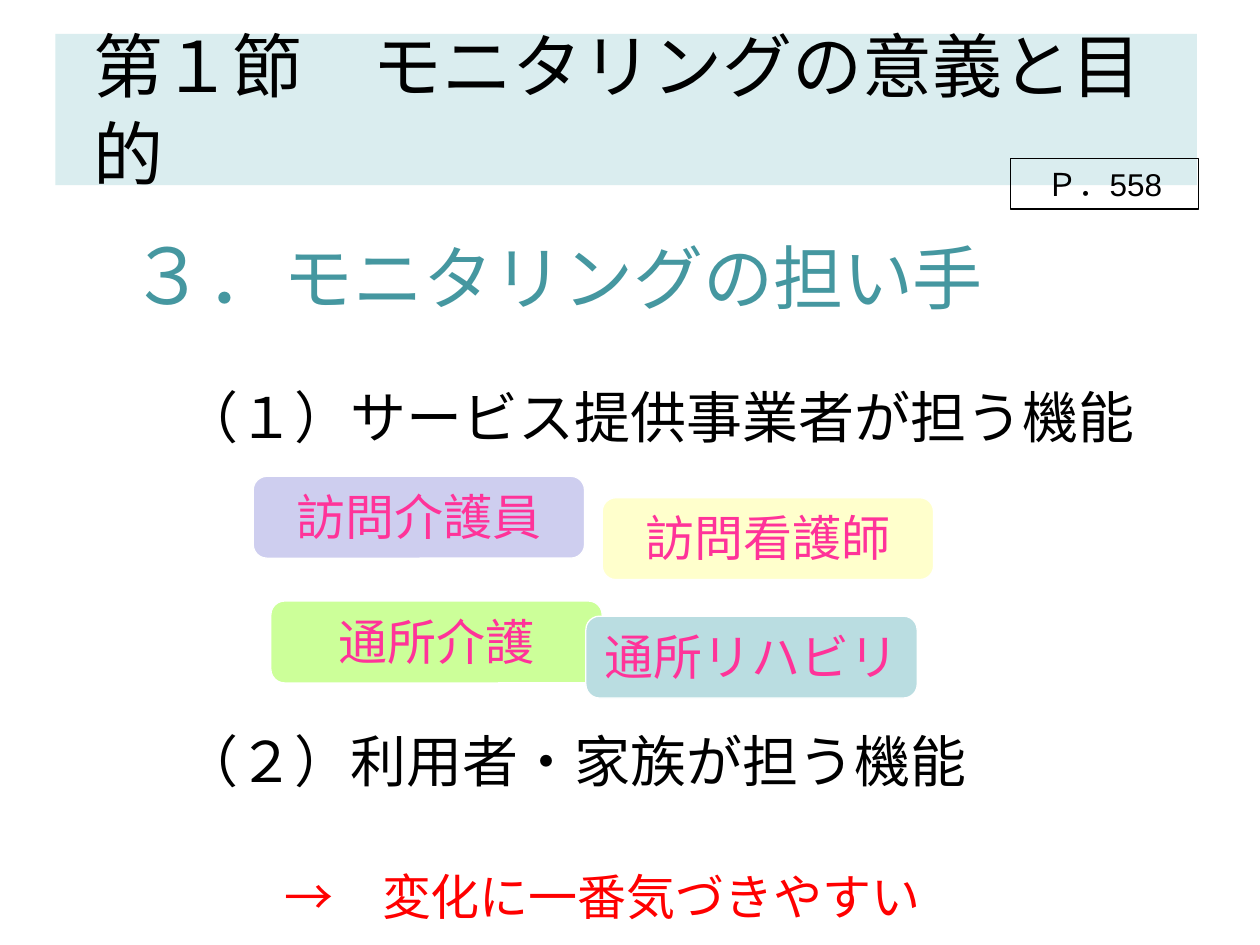
"""Build the slide on who carries out monitoring."""
import pptx
import pptx.dml.color
import pptx.enum.shapes
import pptx.enum.text
import pptx.util

Inches = pptx.util.Inches
Pt = pptx.util.Pt
RGBColor = pptx.dml.color.RGBColor
MSO_SHAPE = pptx.enum.shapes.MSO_SHAPE
ANCHOR = pptx.enum.text.MSO_ANCHOR
ALIGN = pptx.enum.text.PP_ALIGN

BLACK = RGBColor(0x00, 0x00, 0x00)
WHITE = RGBColor(0xFF, 0xFF, 0xFF)
RED = RGBColor(0xFF, 0x00, 0x00)
PINK = RGBColor(0xFF, 0x33, 0x99)
TEAL = RGBColor(0x45, 0x97, 0xA0)
PALE_TEAL = RGBColor(0xDA, 0xED, 0xEF)
LAVENDER = RGBColor(0xCE, 0xCE, 0xEF)
CREAM = RGBColor(0xFF, 0xFF, 0xCC)
LIME = RGBColor(0xCC, 0xFF, 0x99)
AQUA = RGBColor(0xBA, 0xDD, 0xE1)


class SlideBuilder:
    """Hold the text style and the current slide."""

    font_name = "Arial"

    def __init__(self, slide):
        self.slide = slide

    def fill_text(self, frame, paragraphs, color, frame_format=None, indent=0, **paragraph_format):
        """Fill a frame with paragraphs, each a list of (text, size) runs."""
        for name, value in {"word_wrap": True, **(frame_format or {})}.items():
            setattr(frame, name, value)
        for index, runs in enumerate(paragraphs):
            paragraph = frame.add_paragraph() if index else frame.paragraphs[0]
            values = {"alignment": ALIGN.LEFT, **paragraph_format}
            if index == 0:
                values.pop("space_before", None)
            for name, value in values.items():
                setattr(paragraph, name, value)
            if indent:
                paragraph._p.get_or_add_pPr().set("marL", str(Inches(indent)))
            for text, size in runs:
                run = paragraph.add_run()
                run.text = text
                for name, value in {"name": self.font_name, "size": Pt(size)}.items():
                    setattr(run.font, name, value)
                run.font.color.rgb = color

    def text(self, box, paragraphs, color, **style):
        """Add a plain text box."""
        label = self.slide.shapes.add_textbox(*map(Inches, box))
        self.fill_text(label.text_frame, paragraphs, color, **style)

    def panel(self, kind, box, paragraphs, color, fill=None, line=None, **style):
        """Add a preset shape with text."""
        panel = self.slide.shapes.add_shape(kind, *map(Inches, box))
        panel.shadow.inherit = False
        if fill is None:
            panel.fill.background()
        else:
            panel.fill.solid()
            panel.fill.fore_color.rgb = fill
        if line is None:
            panel.line.fill.background()
        else:
            panel.line.color.rgb = line
            panel.line.width = Pt(0.75)
        self.fill_text(panel.text_frame, paragraphs, color, **style)


def main():
    """Create the presentation and save it."""
    deck = pptx.Presentation()
    deck.slide_width, deck.slide_height = Inches(10), Inches(7.5)
    builder = SlideBuilder(deck.slides.add_slide(deck.slide_layouts[6]))
    middle = {"vertical_anchor": ANCHOR.MIDDLE}
    top = {"vertical_anchor": ANCHOR.TOP}

    builder.text((0.73, 1.79, 8.5, 0.88), [[("３．", 44), ("モニタリングの担い手", 40)]], TEAL,
                 frame_format=middle, indent=0.2, line_spacing=Pt(44))
    builder.text((0.73, 2.99, 8.5, 3.42),
                 [[("（１）サービス提供事業者が担う機能", 32)], [("（２）利用者・家族が担う機能", 32)]],
                 BLACK, indent=0.62, space_before=Pt(158))
    builder.panel(MSO_SHAPE.RECTANGLE, (0.44, 0.27, 9.06, 1.2),
                  [[("第１節　モニタリングの意義と目的", 40)]], BLACK, fill=PALE_TEAL,
                  frame_format={**middle, "margin_top": 0}, indent=0.2, line_spacing=Pt(50))
    builder.panel(MSO_SHAPE.RECTANGLE, (8.02, 1.26, 1.49, 0.4), [[("Ｐ．558", 18)]], BLACK,
                  line=BLACK, frame_format=top, alignment=ALIGN.CENTER)

    providers = [
        ("訪問介護員", 2.01, 3.78, LAVENDER),
        ("訪問看護師", 4.78, 3.95, CREAM),
        ("通所介護", 2.15, 4.77, LIME),
        ("通所リハビリ", 4.65, 4.89, AQUA),
    ]
    for provider, left, upper, fill in providers:
        builder.panel(MSO_SHAPE.ROUNDED_RECTANGLE, (left, upper, 2.63, 0.65), [[(provider, 28)]],
                      PINK, fill=fill, line=WHITE, frame_format=top, alignment=ALIGN.CENTER)

    builder.text((1.43, 6.83, 6.7, 0.57), [[("→　変化に一番気づきやすい", 28)]], RED,
                 alignment=ALIGN.CENTER)
    deck.save("out.pptx")


if __name__ == "__main__":
    main()
